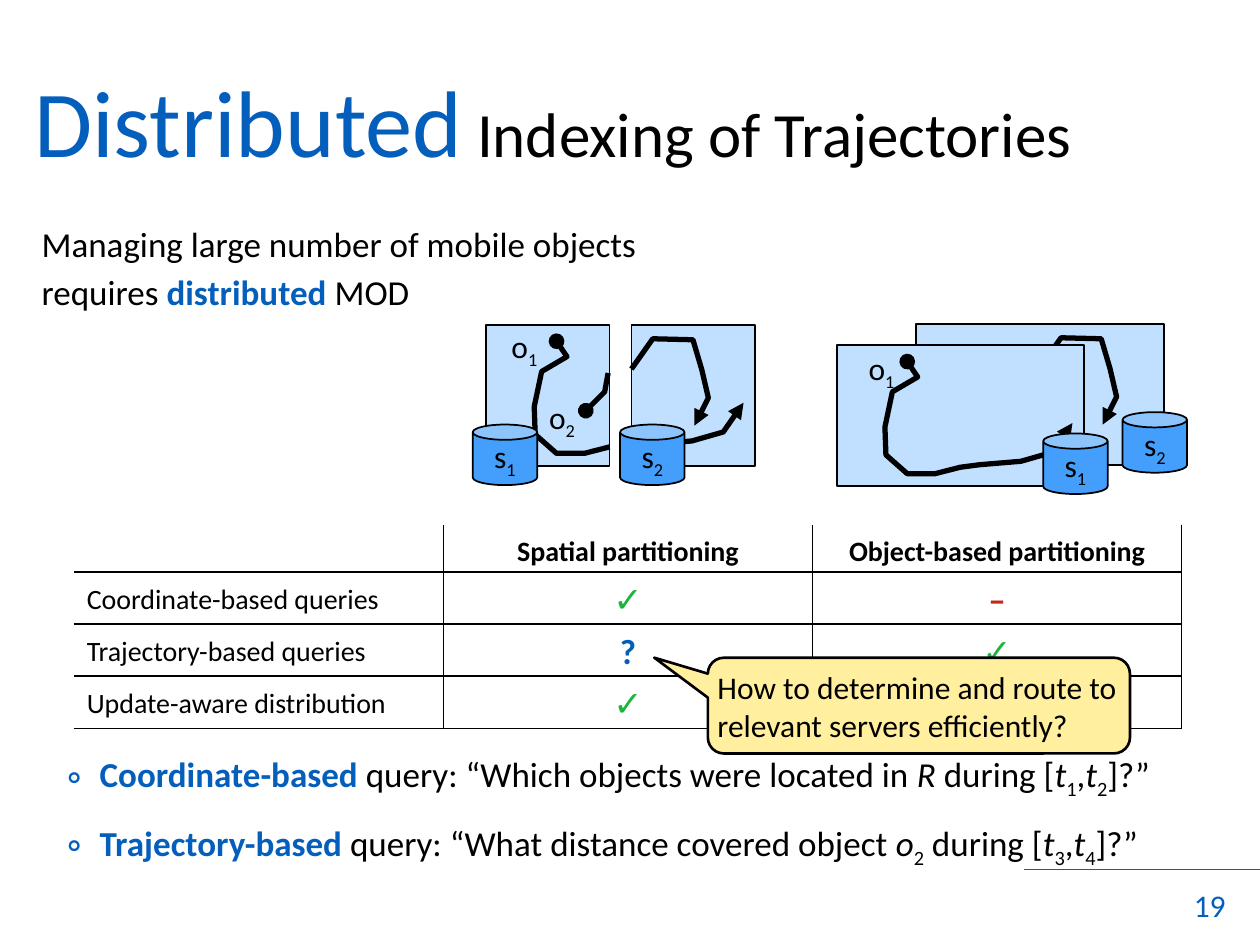
from lxml.etree import SubElement
from pptx import Presentation
from pptx.dml.color import RGBColor
from pptx.enum.shapes import MSO_CONNECTOR, MSO_SHAPE
from pptx.enum.text import MSO_ANCHOR as Anchor, MSO_AUTO_SIZE as AutoSize, PP_ALIGN as Align
from pptx.oxml.ns import qn
from pptx.oxml.xmlchemy import OxmlElement
from pptx.util import Cm, Pt

BLUE, BLACK = RGBColor(0x04, 0x5E, 0xBC), RGBColor(0, 0, 0)
CARD, SERVER = RGBColor(0xC1, 0xDF, 0xFE), RGBColor(0x44, 0x9E, 0xFB)
GREEN, RED = RGBColor(0x1C, 0xB6, 0x3D), RGBColor(0xC7, 0x24, 0x18)
YELLOW = RGBColor(0xFF, 0xEF, 0x9F)
FONT = "Calibri"

# Text: each run is (text, style)
PLAIN, ITALIC, SUB = {}, {"italic": True}, {"sub": True}
KEY = {"bold": True, "color": BLUE}
TITLE = [("Distributed", {"size": 54, "color": BLUE}),
         (" Indexing of Trajectories", {"size": 36})]
INTRO = [("Managing large number of mobile objects\nrequires ", PLAIN),
         ("distributed ", KEY), ("MOD", PLAIN)]
QUERIES = [
    [("Coordinate-based", KEY), (" query: “Which objects were located in ", PLAIN),
     ("R", ITALIC), (" during [", PLAIN), ("t", ITALIC), ("1", SUB), (",", PLAIN),
     ("t", ITALIC), ("2", SUB), ("]?”", PLAIN)],
    [("Trajectory-based", KEY), (" query: “What distance covered object ", PLAIN),
     ("o", ITALIC), ("2", SUB), (" during [", PLAIN), ("t", ITALIC), ("3", SUB),
     (",", PLAIN), ("t", ITALIC), ("4", SUB), ("]?”", PLAIN)],
]
CALLOUT = [("How to determine and route to\nrelevant servers efficiently?", PLAIN)]
TABLE = [
    ["", "Spatial partitioning", "Object-based partitioning"],
    ["Coordinate-based queries", "✓", "–"],
    ["Trajectory-based queries", "?", "✓"],
    ["Update-aware distribution", "✓", "–"],
]
MARK_COLORS = {"✓": GREEN, "–": RED, "?": BLUE}

# Diagrams, in cm; trajectories are relative to a whole card
CARD_W, CARD_H = 4.99, 2.84
HALF_W = 2.49
O1 = [(1.42, 0.33), (1.63, 0.64), (1.12, 0.94), (0.97, 1.65), (0.99, 2.21), (1.42, 2.59),
      (1.98, 2.59), (2.49, 2.46), (2.87, 2.41), (3.71, 2.34), (4.34, 2.16), (4.75, 1.57)]
O2 = [(2.01, 1.73), (2.39, 1.35), (2.46, 0.97), (2.49, 0.89), (2.92, 0.28),
      (3.73, 0.3), (3.91, 0.91), (4.04, 1.47), (3.76, 2.03)]
# origin, (card offset, card width), [(points, starts, ends)], [(label number, x, y)]
CARDS = [
    ((18.47, 6.53), (0, CARD_W), [(O2, True, True)], []),
    ((16.87, 6.96), (0, CARD_W), [(O1, True, True)], [("1", 0.64, 0.08)]),
    ((10.24, 6.55), (HALF_W, HALF_W), [(O1[7:], False, True), (O2[3:], False, True)], []),
    ((9.8, 6.55), (0, HALF_W), [(O1[:8], True, False), (O2[:3], True, False)],
     [("1", 0.51, 0.05), ("2", 1.27, 1.47)]),
]
SERVERS = [("2", 12.5, 8.56), ("1", 9.53, 8.56), ("1", 21.03, 8.74), ("2", 22.63, 8.31)]


def add_runs(para, runs, size):
    for text, style in runs:
        for index, line in enumerate(text.split("\n")):
            if index:
                para.add_line_break()
            span = para.add_run()
            span.text = line
            font = span.font
            font.name, font.size = FONT, Pt(style.get("size", size))
            font.bold, font.italic = style.get("bold", False), style.get("italic", False)
            font.color.rgb = style.get("color", BLACK)
            if style.get("sub"):
                font._element.set("baseline", "-25000")


def set_frame(shape, anchor=Anchor.TOP, margins=(0, 0), wrap=True):
    frame = shape.text_frame
    frame.auto_size, frame.word_wrap = AutoSize.NONE, wrap
    frame.vertical_anchor = anchor
    frame.margin_left = frame.margin_right = Cm(margins[0])
    frame.margin_top = frame.margin_bottom = Cm(margins[1])
    return frame


def add_box(x, y, width, height, **options):
    return set_frame(page.shapes.add_textbox(Cm(x), Cm(y), Cm(width), Cm(height)), **options)


def add_filled(kind, x, y, width, height, color, weight=1):
    shape = page.shapes.add_shape(kind, Cm(x), Cm(y), Cm(width), Cm(height))
    shape.shadow.inherit = False
    shape.fill.solid()
    shape.fill.fore_color.rgb = color
    shape.line.color.rgb, shape.line.width = BLACK, Pt(weight)
    return shape


def add_trajectory(points, origin, starts, ends):
    places = [(Cm(origin[0] + x), Cm(origin[1] + y)) for x, y in points]
    builder = page.shapes.build_freeform(*places[0])
    builder.add_line_segments(places[1:], close=False)
    path = builder.convert_to_shape()
    path.shadow.inherit = False
    path.fill.background()
    path.line.color.rgb, path.line.width = BLACK, Pt(3)
    outline = path.line._get_or_add_ln()
    for wanted, tag, kind in ((starts, "a:headEnd", "oval"), (ends, "a:tailEnd", "triangle")):
        if wanted:
            SubElement(outline, qn(tag), type=kind)


def set_borders(cell, sides):
    properties = cell._tc.get_or_add_tcPr()
    for index, side in enumerate(sides):
        border = OxmlElement(f"a:ln{side}")
        border.set("w", str(Pt(1)))
        fill = SubElement(border, qn("a:solidFill"))
        SubElement(fill, qn("a:srgbClr"), val=str(BLACK))
        properties.insert(index, border)


def add_bullet(para):
    properties = para._p.get_or_add_pPr()
    properties.set("marL", str(Cm(1.78)))
    properties.set("indent", str(Cm(-0.66)))
    color = SubElement(properties, qn("a:buClr"))
    SubElement(color, qn("a:srgbClr"), val=str(BLUE))
    SubElement(properties, qn("a:buSzPct"), val="120000")
    SubElement(properties, qn("a:buFont"), typeface=FONT)
    SubElement(properties, qn("a:buChar"), char="◦")


deck = Presentation()
deck.slide_width, deck.slide_height = Cm(25.4), Cm(19.05)
page = deck.slides.add_slide(deck.slide_layouts[5])

# Title
title = page.shapes.title
title.left, title.top, title.width, title.height = Cm(0.69), Cm(1.27), Cm(24), Cm(2.84)
para = set_frame(title).paragraphs[0]
para.alignment = Align.LEFT
add_runs(para, TITLE, 36)

# Footer rule and page number
rule = page.shapes.add_connector(MSO_CONNECTOR.STRAIGHT, Cm(25.4), Cm(17.53), Cm(20.65), Cm(17.53))
rule.line.color.rgb, rule.line.width = BLUE, Pt(1)
SubElement(rule._element.spPr, qn("a:effectLst"))
para = add_box(22.63, 17.48, 2.08, 1.27, anchor=Anchor.BOTTOM, margins=(0, 0.13)).paragraphs[0]
para.alignment = Align.RIGHT
add_runs(para, [("19", {"color": BLUE})], 18)

# Introduction and queries
para = add_box(0.84, 4.37, 16.03, 3.18).paragraphs[0]
para.line_spacing = 1.14
add_runs(para, INTRO, 20)
frame = add_box(0.23, 11.13, 24.49, 6.4, anchor=Anchor.BOTTOM)
for index, runs in enumerate(QUERIES):
    para = frame.add_paragraph() if index else frame.paragraphs[0]
    add_bullet(para)
    para.line_spacing = 1.15
    if index:
        para.space_before = Pt(8)
    add_runs(para, runs, 20)

# Comparison table
grid = page.shapes.add_table(4, 3, Cm(1.5), Cm(10.59), Cm(22.32), Cm(4.09)).table
grid.first_row = grid.horz_banding = False
for column in grid.columns:
    column.width = Cm(7.44)
for r, texts in enumerate(TABLE):
    grid.rows[r].height = Cm(1.05 if r else 0.94)
    for c, text in enumerate(texts):
        cell = grid.cell(r, c)
        cell.fill.background()
        set_borders(cell, ("L" if c else "") + "R" + ("T" if r else "") + "B")
        cell.vertical_anchor = Anchor.MIDDLE if r else Anchor.BOTTOM
        cell.margin_left = cell.margin_right = Cm(0.1 if c else 0.25)
        cell.margin_top = cell.margin_bottom = Cm(0.05)
        para = cell.text_frame.paragraphs[0]
        para.alignment = Align.CENTER if c else Align.LEFT
        para.line_spacing = 1.1
        if text:
            style = {"bold": c > 0, "color": MARK_COLORS.get(text, BLACK)}
            add_runs(para, [(text, style)], 20 if text in MARK_COLORS else 16)

# Cards with trajectories
for (left, top), (offset, width), trajectories, labels in CARDS:
    add_filled(MSO_SHAPE.RECTANGLE, left + offset, top, width, CARD_H, CARD)
    for points, starts, ends in trajectories:
        add_trajectory(points, (left, top), starts, ends)
    for number, x, y in labels:
        label = add_box(left + x, top + y, 0.58, 0.76, wrap=False)
        add_runs(label.paragraphs[0], [("o", PLAIN), (number, SUB)], 18)

# Servers
for number, x, y in SERVERS:
    can = add_filled(MSO_SHAPE.CAN, x, y, 1.3, 1.22, SERVER)
    can.adjustments[0] = 0.252
    para = set_frame(can, Anchor.MIDDLE, (0.15, 0)).paragraphs[0]
    para.alignment = Align.CENTER
    add_runs(para, [("s", PLAIN), (number, SUB)], 18)

# Callout
callout = add_filled(MSO_SHAPE.ROUNDED_RECTANGULAR_CALLOUT, 14.27, 13.26, 8.51, 1.93, YELLOW, 1.5)
for index, value in enumerate((-0.627, -0.501, 0.167)):
    callout.adjustments[index] = value
para = set_frame(callout, Anchor.MIDDLE, (0.1, 0.1), wrap=False).paragraphs[0]
para.alignment = Align.LEFT
add_runs(para, CALLOUT, 18)

deck.save("out.pptx")
